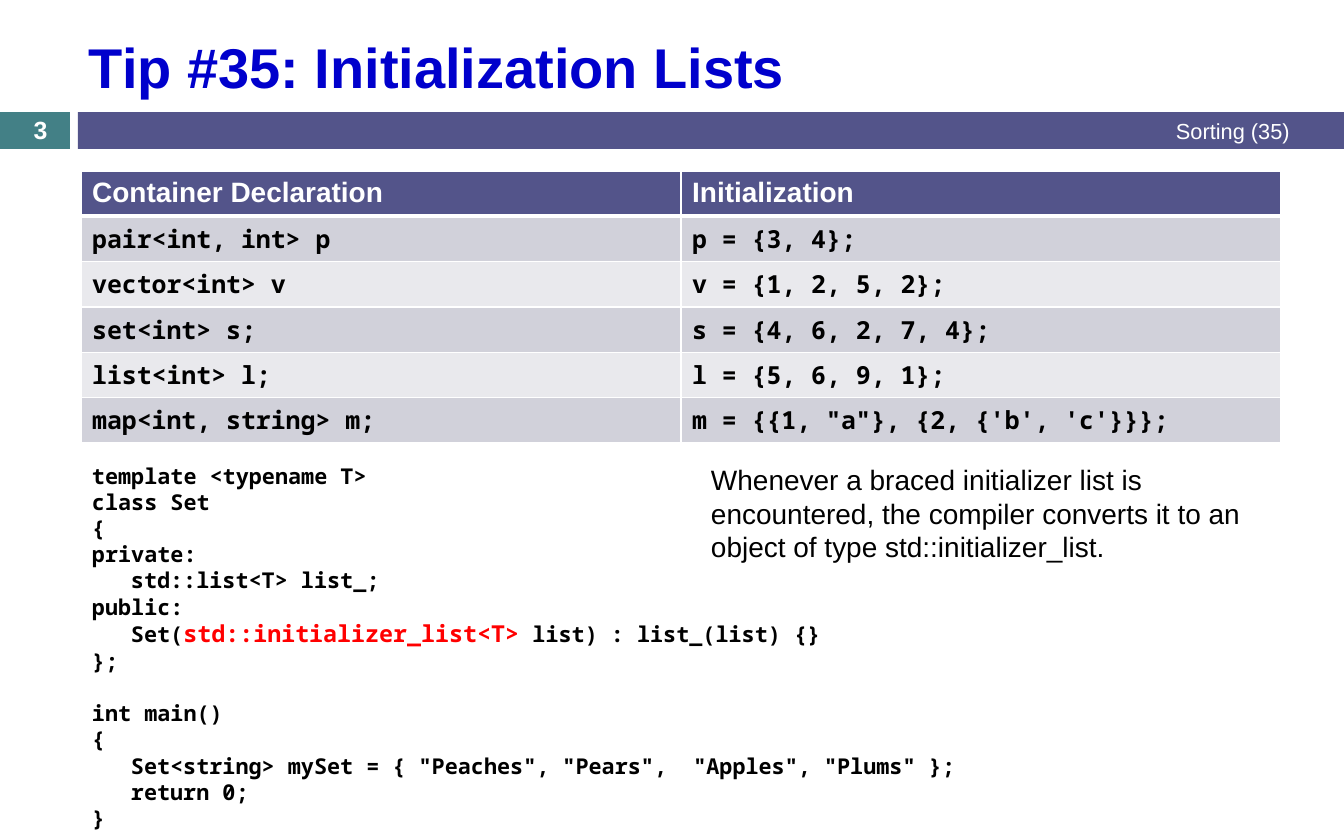
from lxml import etree
from pptx import Presentation
from pptx.dml.color import RGBColor
from pptx.enum import shapes, text
from pptx.oxml import ns
from pptx.util import Pt

PX = 914400 // 112
SANS, MONO = "Arial", "Noto Sans Mono"
COLORS = {
    "teal": "438086", "indigo": "53548A", "title": "0000CC", "white": "FFFFFF",
    "black": "000000", "red": "FF0000", "band_dark": "D1D1DA", "band_light": "E9E9ED",
}
ROWS = [
    ("Container Declaration", "Initialization"),
    ("pair<int, int> p", "p = {3, 4};"),
    ("vector<int> v", "v = {1, 2, 5, 2};"),
    ("set<int> s;", "s = {4, 6, 2, 7, 4};"),
    ("list<int> l;", "l = {5, 6, 9, 1};"),
    ("map<int, string> m;", "m = {{1, \"a\"}, {2, {'b', 'c'}}};"),
]
# Each code line: indent level, then its text; "|" encloses the highlighted part
CODE = [
    (0, "template <typename T>"),
    (0, "class Set"),
    (0, "{"),
    (0, "private:"),
    (1, "std::list<T> list_;"),
    (0, "public:"),
    (1, "Set(|std::initializer_list<T>| list) : list_(list) {}"),
    (0, "};"),
    (0, "int main()"),
    (0, "{"),
    (1, 'Set<string> mySet = { "Peaches", "Pears",  "Apples", "Plums" };'),
    (1, "return 0;"),
    (0, "}"),
]
CODE_INDENT = 39
CODE_GAP = 17


def color(name):
    return RGBColor.from_string(COLORS[name])


def lengths(*values):
    return [value * PX for value in values]


def add_span(para, words, size=18, font=SANS, fill="black", bold=False):
    span = para.add_run()
    span.text = words
    span.font.size = Pt(size)
    span.font.name = font
    span.font.bold = bold
    span.font.color.rgb = color(fill)


def add_bar(page, area, fill):
    bar = page.shapes.add_shape(shapes.MSO_SHAPE.RECTANGLE, *lengths(*area))
    bar.shadow.inherit = False
    bar.fill.solid()
    bar.fill.fore_color.rgb = color(fill)
    bar.line.fill.background()


def add_box(page, area, anchor=text.MSO_ANCHOR.TOP):
    frame = page.shapes.add_textbox(*lengths(*area)).text_frame
    frame.word_wrap = True
    frame.vertical_anchor = anchor
    return frame


def add_label(page, area, words, align=text.PP_ALIGN.LEFT,
              anchor=text.MSO_ANCHOR.MIDDLE, **style):
    para = add_box(page, area, anchor).paragraphs[0]
    para.alignment = align
    add_span(para, words, **style)


def set_borders(cell, bottom):
    properties = cell._tc.get_or_add_tcPr()
    edges = [("lnL", 1), ("lnR", 1), ("lnT", 1), ("lnB", bottom)]
    for place, (edge, width) in enumerate(edges):
        line = etree.Element(ns.qn("a:" + edge), w=str(Pt(width)))
        fill = etree.SubElement(line, ns.qn("a:solidFill"))
        etree.SubElement(fill, ns.qn("a:srgbClr"), val=COLORS["white"])
        properties.insert(place, line)


def add_grid(page, area, rows):
    left, top, width, height = lengths(*area)
    table = page.shapes.add_table(len(rows), len(rows[0]), left, top, width, height).table
    for row_number, row in enumerate(rows):
        header = row_number == 0
        if header:
            band, style = "indigo", dict(size=18, fill="white")
        else:
            band = "band_dark" if row_number % 2 else "band_light"
            style = dict(size=16, font=MONO)
        for column, words in enumerate(row):
            cell = table.cell(row_number, column)
            cell.fill.solid()
            cell.fill.fore_color.rgb = color(band)
            set_borders(cell, bottom=3 if header else 1)
            add_span(cell.text_frame.paragraphs[0], words, bold=True, **style)


def add_code(page, area, lines):
    frame = add_box(page, area)
    for number, (level, line) in enumerate(lines):
        para = frame.add_paragraph() if number else frame.paragraphs[0]
        if level:
            para._p.get_or_add_pPr().set("marL", str(level * CODE_INDENT * PX))
        if line == "int main()":
            para.space_before = Pt(CODE_GAP)
        for part, words in enumerate(line.split("|")):
            style = dict(size=15, fill="red") if part % 2 else dict(size=14)
            add_span(para, words, font=MONO, bold=True, **style)


def main():
    deck = Presentation()
    deck.slide_width, deck.slide_height = lengths(1344, 840)
    page = deck.slides.add_slide(deck.slide_layouts[6])

    # Title and header band
    add_bar(page, (0, 112, 70, 37), "teal")
    add_bar(page, (78, 112, 1266, 37), "indigo")
    add_label(page, (78, 21, 1222, 90), "Tip #35: Initialization Lists",
              size=36, fill="title", bold=True)
    add_label(page, (691, 112, 610, 37), "Sorting (35)",
              align=text.PP_ALIGN.RIGHT, size=14, fill="white")
    add_label(page, (0, 113, 81, 34), "3",
              align=text.PP_ALIGN.CENTER, size=16, fill="white", bold=True)

    # Declarations, sample program and explanation
    add_grid(page, (81, 171, 1200, 272), ROWS)
    add_code(page, (81, 457, 1103, 383), CODE)
    add_label(page, (700, 457, 581, 147),
              "Whenever a braced initializer list is encountered, the compiler "
              "converts it to an object of type std::initializer_list.",
              anchor=text.MSO_ANCHOR.TOP)

    deck.save("out.pptx")


if __name__ == "__main__":
    main()
